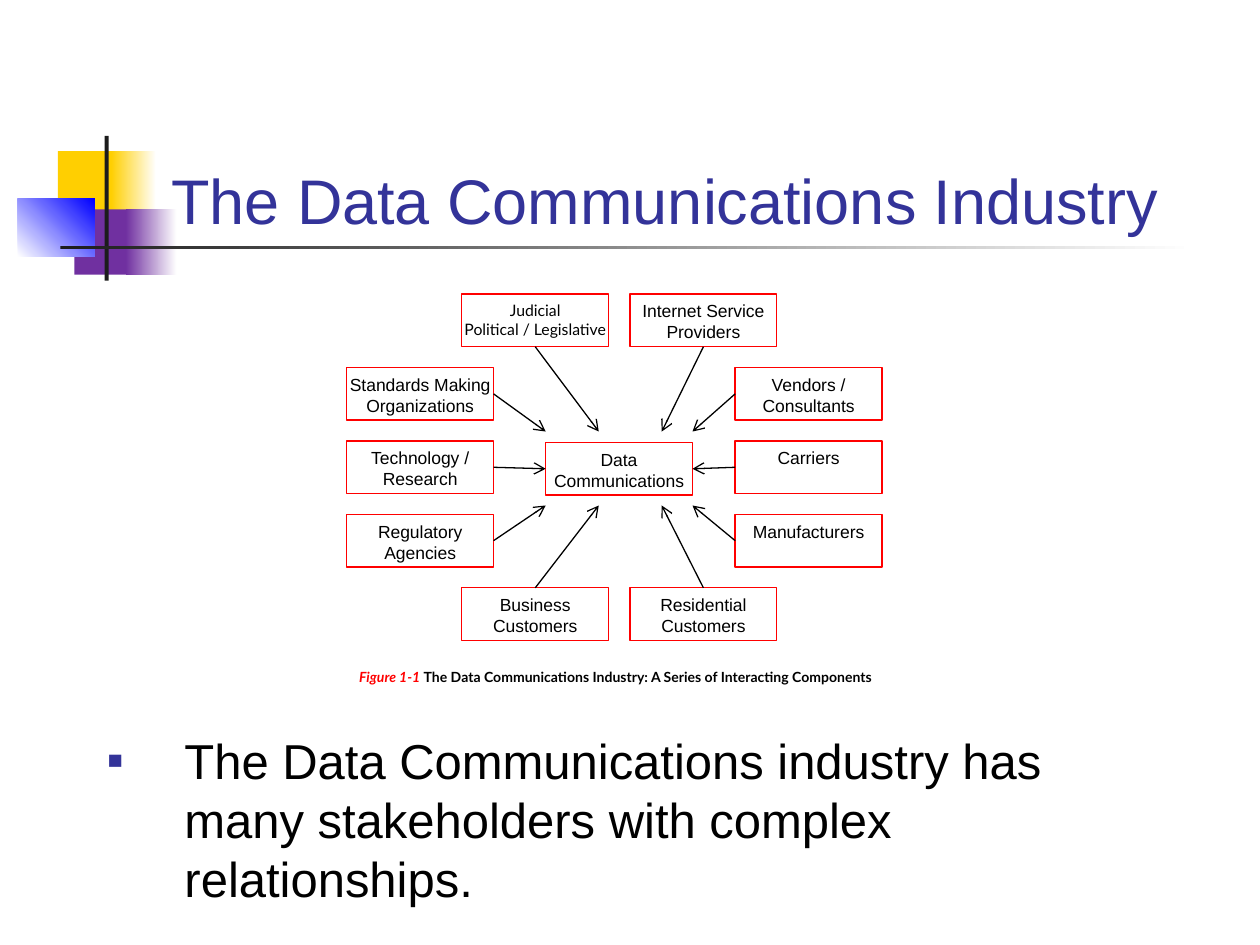
from dataclasses import dataclass

from lxml.etree import SubElement
from pptx import Presentation
from pptx.dml.color import RGBColor
from pptx.enum.shapes import MSO_CONNECTOR, MSO_SHAPE
from pptx.enum.text import MSO_ANCHOR, PP_ALIGN
from pptx.oxml.ns import qn
from pptx.util import Cm, Pt

TOP, LEFT, BOTTOM, RIGHT = range(4)


@dataclass(frozen=True)
class Theme:
    ink: str = "000000"
    paper: str = "FFFFFF"
    heading: str = "333399"
    accent: str = "FF0000"
    yellow: str = "FFCF01"
    purple: str = "7030A0"
    blue: str = "0000FF"
    rule: str = "1C1C1C"
    sans: str = "Arial"
    caption: str = "Lato"
    title_size: float = 36
    body_size: float = 28
    box_size: float = 10
    small_box_size: float = 9
    caption_size: float = 8
    line_width: float = 0.75


class SlideBuilder:
    def __init__(self, s, theme):
        self.s, self.theme = s, theme

    def run(self, p, text, **formats):
        """Add a run; formats are font attributes, with color as a hex string."""
        r = p.add_run()
        r.text = text
        values = {"name": self.theme.sans, "color": self.theme.ink, **formats}
        r.font.color.rgb = RGBColor.from_string(values.pop("color"))
        values["size"] = Pt(values["size"])
        for name, value in values.items():
            setattr(r.font, name, value)

    def rect(self, x, y, w, h):
        sp = self.s.shapes.add_shape(MSO_SHAPE.RECTANGLE, Cm(x), Cm(y), Cm(w), Cm(h))
        sp.shadow.inherit = False
        return sp

    def block(self, x, y, w, h, *colors, angle=0):
        """Borderless rectangle: one colour is solid, two make a gradient."""
        sp = self.rect(x, y, w, h)
        sp.line.fill.background()
        if len(colors) == 1:
            sp.fill.solid()
            sp.fill.fore_color.rgb = RGBColor.from_string(colors[0])
            return
        sp.fill.gradient()
        sp.fill.gradient_angle = angle
        for stop, color in zip(sp.fill.gradient_stops, colors):
            stop.color.rgb = RGBColor.from_string(color)

    def box(self, x, y, w, h, lines, **formats):
        """Outlined box with centred lines of text."""
        sp = self.rect(x, y, w, h)
        sp.fill.background()
        sp.line.color.rgb = RGBColor.from_string(self.theme.accent)
        sp.line.width = Pt(self.theme.line_width)
        tf = sp.text_frame
        tf.word_wrap = False
        tf.vertical_anchor = MSO_ANCHOR.TOP
        for i, line in enumerate(lines):
            p = tf.add_paragraph() if i else tf.paragraphs[0]
            p.alignment = PP_ALIGN.CENTER
            self.run(p, line, **{"size": self.theme.box_size, **formats})
        return sp

    def text(self, x, y, w, h, runs, anchor=MSO_ANCHOR.TOP):
        """Wrapped text box of one paragraph, which is returned."""
        tf = self.s.shapes.add_textbox(Cm(x), Cm(y), Cm(w), Cm(h)).text_frame
        tf.word_wrap = True
        tf.vertical_anchor = anchor
        p = tf.paragraphs[0]
        for content, formats in runs:
            self.run(p, content, **formats)
        return p

    def bullet(self, p, char, indent):
        p.space_before = Pt(self.theme.body_size * 0.2)
        pPr = p._p.get_or_add_pPr()
        pPr.set("marL", str(Cm(indent)))
        pPr.set("indent", str(-Cm(indent)))
        SubElement(SubElement(pPr, qn("a:buClr")), qn("a:srgbClr"), val=self.theme.heading)
        SubElement(pPr, qn("a:buFont"), typeface=self.theme.sans)
        SubElement(pPr, qn("a:buChar"), char=char)

    def arrow(self, box, side, x, y, target=None, target_side=None):
        """Arrow from a side of box to (x, y), or joined to a side of target."""
        line = self.s.shapes.add_connector(
            MSO_CONNECTOR.STRAIGHT, box.left, box.top, Cm(x), Cm(y))
        line.begin_connect(box, side)
        if target is not None:
            line.end_connect(target, target_side)
        line.line.color.rgb = RGBColor.from_string(self.theme.ink)
        line.line.width = Pt(self.theme.line_width)
        spPr = line._element.spPr
        SubElement(spPr.find(qn("a:ln")), qn("a:tailEnd"), type="arrow")
        SubElement(spPr, qn("a:effectLst"))


def add_decoration(b):
    t = b.theme
    b.block(1.17, 3.05, 1.22, 1.32, t.yellow)
    b.block(2.24, 3.05, 0.91, 1.32, t.yellow, t.paper)
    b.block(1.5, 4.22, 1.17, 1.32, t.purple)
    b.block(2.54, 4.22, 1.02, 1.32, t.purple, t.paper)
    b.block(0.36, 4.01, 1.55, 1.17, t.paper, t.blue, angle=45)
    b.block(2.11, 2.74, 0.08, 2.92, t.rule)
    b.block(1.22, 4.95, 22.86, 0.08, t.rule, t.paper)


def add_diagram(b):
    width, height = 2.96, 1.06
    first_row, pitch = 5.93, 1.48
    hub_x, hub_y = 11, 8.92
    hub_right = hub_x + width
    above, middle, below = 8.7, hub_y + height / 2, 10.19
    outer_left, inner_left, inner_right, outer_right = 6.99, 9.31, 12.7, 14.82
    small = {"name": b.theme.caption, "size": b.theme.small_box_size}

    hub = b.box(hub_x, hub_y, width, height, ["Data", "Communications"])
    # column x, row, text, font, side the arrow leaves, arrow end x and y
    stakeholders = [
        (inner_left, 0, ["Judicial", "Political / Legislative"], small, BOTTOM, 12.07, above),
        (inner_right, 0, ["Internet Service", "Providers"], {}, BOTTOM, 13.34, above),
        (outer_left, 1, ["Standards Making", "Organizations"], {}, RIGHT, hub_x, above),
        (outer_right, 1, ["Vendors /", "Consultants"], {}, LEFT, hub_right, above),
        (outer_left, 2, ["Technology /", "Research"], {}, RIGHT, hub_x, middle),
        (outer_right, 2, ["Carriers"], {}, LEFT, hub_right, middle),
        (outer_left, 3, ["Regulatory", "Agencies"], {}, RIGHT, hub_x, below),
        (outer_right, 3, ["Manufacturers"], {}, LEFT, hub_right, below),
        (inner_left, 4, ["Business", "Customers"], {}, TOP, 12.07, below),
        (inner_right, 4, ["Residential", "Customers"], {}, TOP, 13.34, below),
    ]
    for x, row, lines, formats, side, end_x, end_y in stakeholders:
        box = b.box(x, first_row + row * pitch, width, height, lines, **formats)
        if end_y == middle:
            b.arrow(box, side, end_x, end_y, hub, LEFT if side == RIGHT else RIGHT)
        else:
            b.arrow(box, side, end_x, end_y)


def main():
    prs = Presentation()
    prs.slide_width, prs.slide_height = Cm(25.4), Cm(19.05)
    t = Theme()
    b = SlideBuilder(prs.slides.add_slide(prs.slide_layouts[6]), t)

    add_decoration(b)
    b.text(3.2, 1.73, 21.64, 3.17,
           [("The Data Communications Industry", {"size": t.title_size, "color": t.heading})],
           MSO_ANCHOR.BOTTOM)
    add_diagram(b)
    caption = {"name": t.caption, "size": t.caption_size, "bold": True}
    b.text(6.99, 13.36, 11.43, 0.61, [
        ("Figure 1-1 ", {**caption, "color": t.accent, "italic": True}),
        ("The Data Communications Industry: A Series of Interacting Components", caption),
    ])
    p = b.text(1.9, 14.6, 21.6, 2.84, [
        ("The Data Communications industry has many stakeholders with complex relationships.",
         {"size": t.body_size})])
    b.bullet(p, "▪", 1.57)

    prs.save("out.pptx")


if __name__ == "__main__":
    main()
